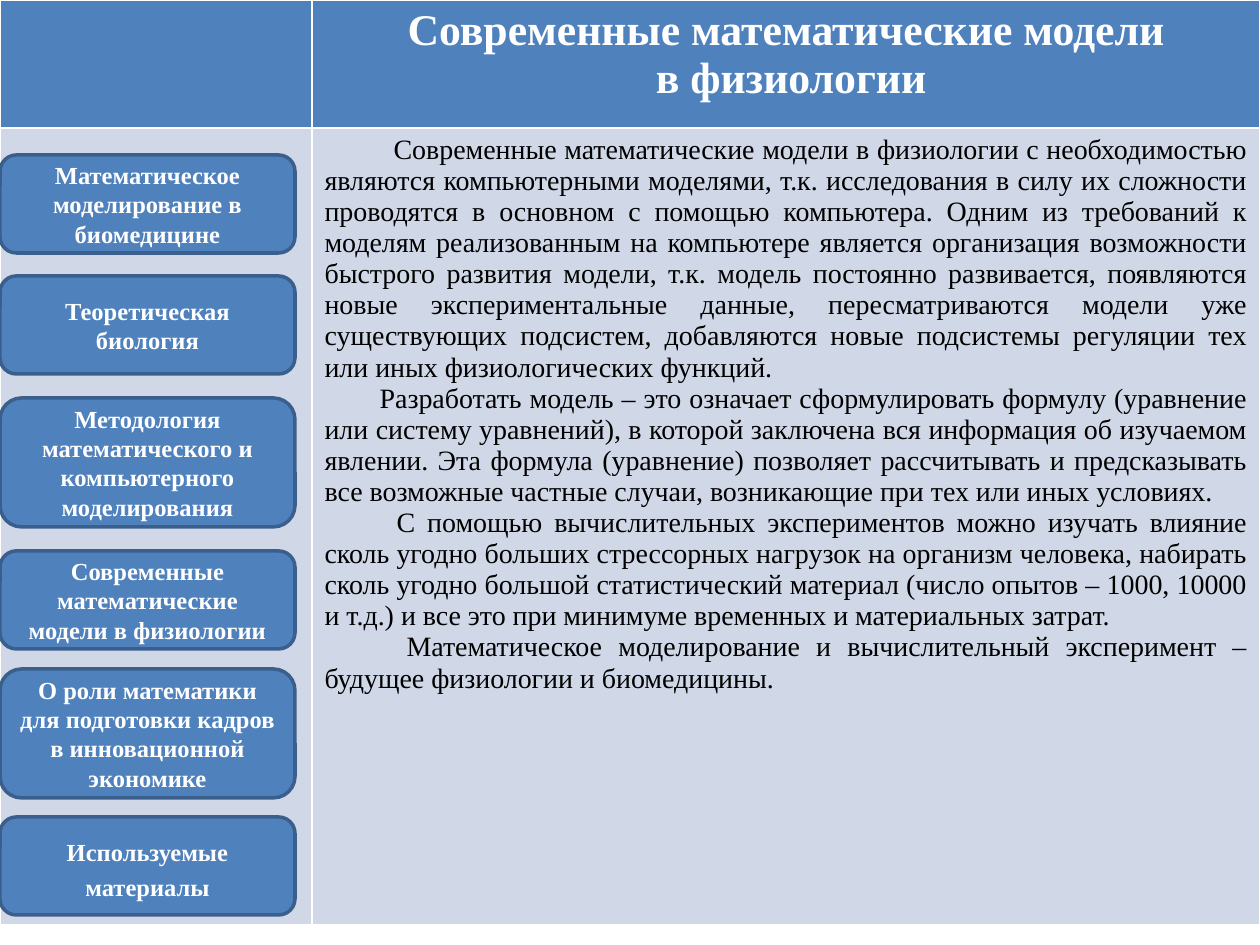
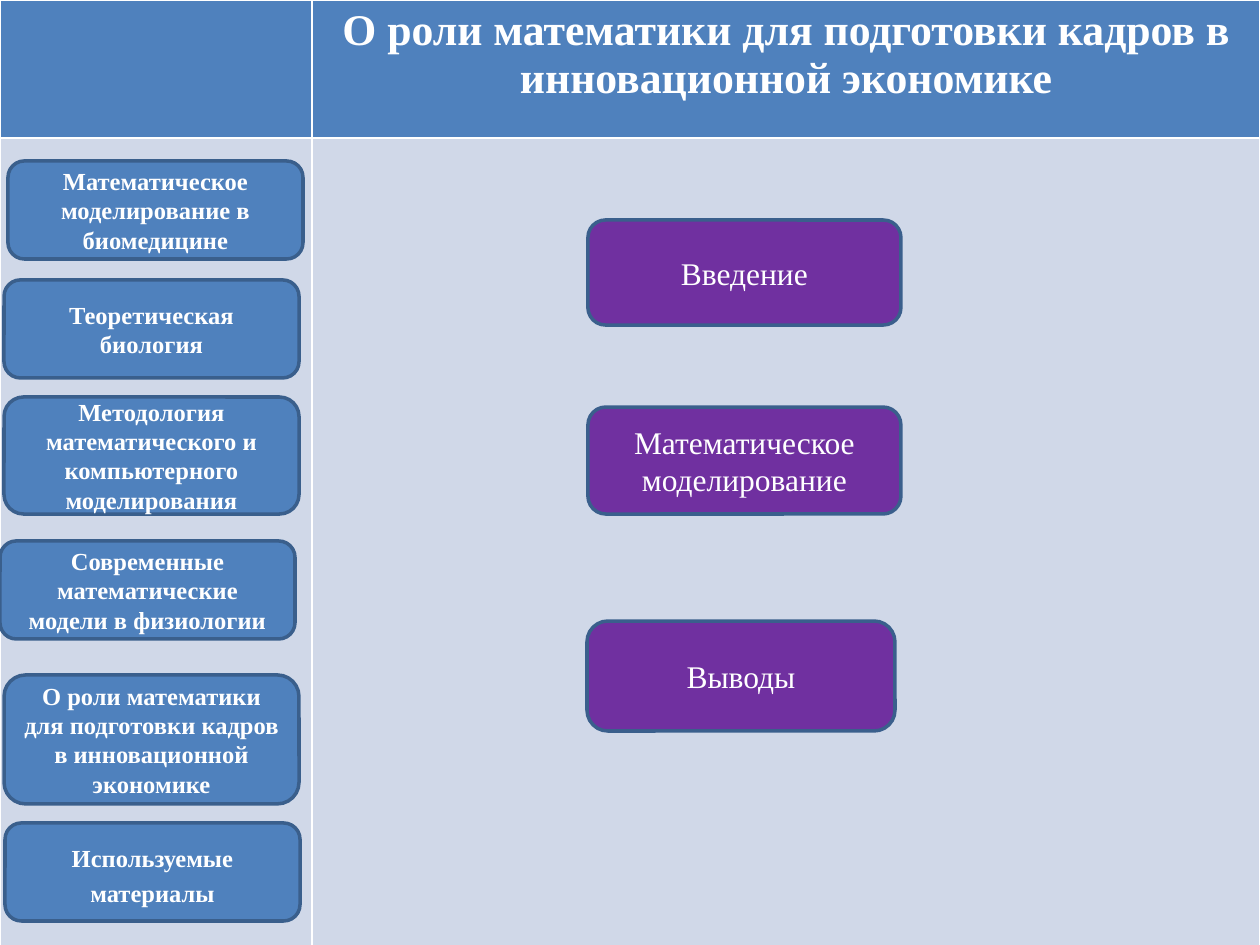
import dataclasses
import typing

import pptx
import pptx.dml.color
import pptx.enum.shapes
import pptx.enum.text
import pptx.util

PIXELS_PER_INCH = 126
SLIDE_WIDTH, SLIDE_HEIGHT = 1260, 945
MENU_COLUMN = 312
MENU_BUTTON_WIDTH = 295

FONT = "Times New Roman"
BLUE = "4F81BD"
PALE_BLUE = "D0D8E8"
OUTLINE = "3A5F8C"
PURPLE = "7030A0"
WHITE = "FFFFFF"
BLACK = "000000"

CENTER = pptx.enum.text.PP_ALIGN.CENTER
JUSTIFY = pptx.enum.text.PP_ALIGN.JUSTIFY


@dataclasses.dataclass(frozen=True)
class TextStyle:
    size: int
    color: str = WHITE
    bold: bool = False
    alignment: pptx.enum.text.PP_ALIGN = CENTER


class Line(typing.NamedTuple):
    """A paragraph and its first-line indent in px."""
    text: str
    indent: int = 0


class Box(typing.NamedTuple):
    left: int
    top: int
    width: int
    height: int


class MenuPlace(typing.NamedTuple):
    left: int
    top: int
    height: int


@dataclasses.dataclass(frozen=True)
class Button:
    text: str
    box: Box
    fill: str
    style: TextStyle
    corner: float = 0.167
    line_spacing: float = 1.0


@dataclasses.dataclass(frozen=True)
class Page:
    title: list[Line]
    row_heights: tuple[int, int]
    menu: list[MenuPlace]
    body: list[Line] = dataclasses.field(default_factory=list)
    topics: list[Button] = dataclasses.field(default_factory=list)


TITLE_STYLE = TextStyle(25, bold=True)
BODY_STYLE = TextStyle(16, color=BLACK, alignment=JUSTIFY)
MENU_STYLE = TextStyle(14, bold=True)
TOPIC_STYLE = TextStyle(18)

ROLE_TITLE = "О роли математики для подготовки кадров в инновационной экономике"
MENU_TEXTS = [
    "Математическое моделирование в биомедицине",
    "Теоретическая биология",
    "Методология математического и компьютерного моделирования",
    "Современные математические модели в физиологии",
    ROLE_TITLE,
    "Используемые материалы",
]
MENU_LINE_SPACING = {"Используемые материалы": 1.2}

PAGES = [
    Page(
        title=[
            Line("Современные математические модели"),
            Line("в физиологии", 10),
        ],
        row_heights=(128, 797),
        menu=[
            MenuPlace(0, 155, 98),
            MenuPlace(0, 276, 98),
            MenuPlace(0, 398, 129),
            MenuPlace(0, 551, 98),
            MenuPlace(0, 669, 129),
            MenuPlace(0, 817, 98),
        ],
        body=[
            Line("Современные математические модели в физиологии с необходимостью "
                 "являются компьютерными моделями, т.к. исследования в силу их "
                 "сложности проводятся в основном с помощью компьютера. Одним из "
                 "требований к моделям реализованным на компьютере является "
                 "организация возможности быстрого развития модели, т.к. модель "
                 "постоянно развивается, появляются новые экспериментальные данные, "
                 "пересматриваются модели уже существующих подсистем, добавляются "
                 "новые подсистемы регуляции тех или иных физиологических функций.",
                 69),
            Line("Разработать модель – это означает сформулировать формулу "
                 "(уравнение или систему уравнений), в которой заключена вся "
                 "информация об изучаемом явлении. Эта формула (уравнение) позволяет "
                 "рассчитывать и предсказывать все возможные частные случаи, "
                 "возникающие при тех или иных условиях.", 55),
            Line("С помощью вычислительных экспериментов можно изучать влияние "
                 "сколь угодно больших стрессорных нагрузок на организм человека, "
                 "набирать сколь угодно большой статистический материал (число "
                 "опытов – 1000, 10000 и т.д.) и все это при минимуме временных и "
                 "материальных затрат.", 72),
            Line("Математическое моделирование и вычислительный эксперимент – "
                 "будущее физиологии и биомедицины.", 82),
        ],
    ),
    Page(
        title=[Line(ROLE_TITLE)],
        row_heights=(138, 827),
        menu=[
            MenuPlace(8, 161, 98),
            MenuPlace(4, 280, 98),
            MenuPlace(4, 397, 117),
            MenuPlace(0, 541, 98),
            MenuPlace(4, 675, 129),
            MenuPlace(5, 823, 98),
        ],
        topics=[
            Button("Введение", Box(588, 220, 313, 105), PURPLE, TOPIC_STYLE),
            Button("Математическое моделирование", Box(588, 407, 313, 107),
                   PURPLE, TOPIC_STYLE),
            Button("Выводы", Box(587, 621, 308, 110), PURPLE, TOPIC_STYLE,
                   corner=0.19),
        ],
    ),
]


def px(length: int) -> pptx.util.Emu:
    return pptx.util.Emu(round(length * 914400 / PIXELS_PER_INCH))


def rgb(color: str) -> pptx.dml.color.RGBColor:
    return pptx.dml.color.RGBColor.from_string(color)


def paint(filled, color: str) -> None:
    filled.fill.solid()
    filled.fill.fore_color.rgb = rgb(color)


def write_lines(text_frame, lines: list[Line], style: TextStyle,
                line_spacing: float = 1.0) -> None:
    text_frame.text = "\n".join(line.text for line in lines)
    for paragraph, line in zip(text_frame.paragraphs, lines):
        paragraph.alignment = style.alignment
        paragraph.line_spacing = line_spacing
        if line.indent:
            properties = paragraph._p.get_or_add_pPr()
            properties.set("marL", "0")
            properties.set("indent", str(px(line.indent)))
        for run in paragraph.runs:
            run.font.name = FONT
            run.font.size = pptx.util.Pt(style.size)
            run.font.bold = style.bold
            run.font.color.rgb = rgb(style.color)


def add_layout_table(slide, page: Page) -> None:
    """Draw the header row, the menu column and the body cell."""
    table = slide.shapes.add_table(
        2, 2, 0, 0, px(SLIDE_WIDTH), px(sum(page.row_heights))).table
    for column, width in zip(table.columns, (MENU_COLUMN, SLIDE_WIDTH - MENU_COLUMN)):
        column.width = px(width)
    for row, height, color in zip(table.rows, page.row_heights, (BLUE, PALE_BLUE)):
        row.height = px(height)
        for cell in row.cells:
            paint(cell, color)
    write_lines(table.cell(0, 1).text_frame, page.title, TITLE_STYLE)
    if page.body:
        write_lines(table.cell(1, 1).text_frame, page.body, BODY_STYLE)


def add_button(slide, button: Button) -> None:
    shape = slide.shapes.add_shape(
        pptx.enum.shapes.MSO_SHAPE.ROUNDED_RECTANGLE,
        *(px(length) for length in button.box))
    shape.adjustments[0] = button.corner
    shape.shadow.inherit = False
    paint(shape, button.fill)
    shape.line.color.rgb = rgb(OUTLINE)
    shape.line.width = pptx.util.Pt(2)
    shape.text_frame.word_wrap = True
    shape.text_frame.vertical_anchor = pptx.enum.text.MSO_ANCHOR.MIDDLE
    write_lines(shape.text_frame, [Line(button.text)], button.style,
                button.line_spacing)


def add_menu(slide, places: list[MenuPlace]) -> None:
    for text, place in zip(MENU_TEXTS, places):
        box = Box(place.left, place.top, MENU_BUTTON_WIDTH, place.height)
        add_button(slide, Button(text, box, BLUE, MENU_STYLE,
                                 line_spacing=MENU_LINE_SPACING.get(text, 1.0)))


def main() -> None:
    presentation = pptx.Presentation()
    presentation.slide_width = px(SLIDE_WIDTH)
    presentation.slide_height = px(SLIDE_HEIGHT)
    blank_layout = presentation.slide_layouts[6]
    for page in PAGES:
        slide = presentation.slides.add_slide(blank_layout)
        add_layout_table(slide, page)
        add_menu(slide, page.menu)
        for topic in page.topics:
            add_button(slide, topic)
    presentation.save("out.pptx")


if __name__ == "__main__":
    main()
